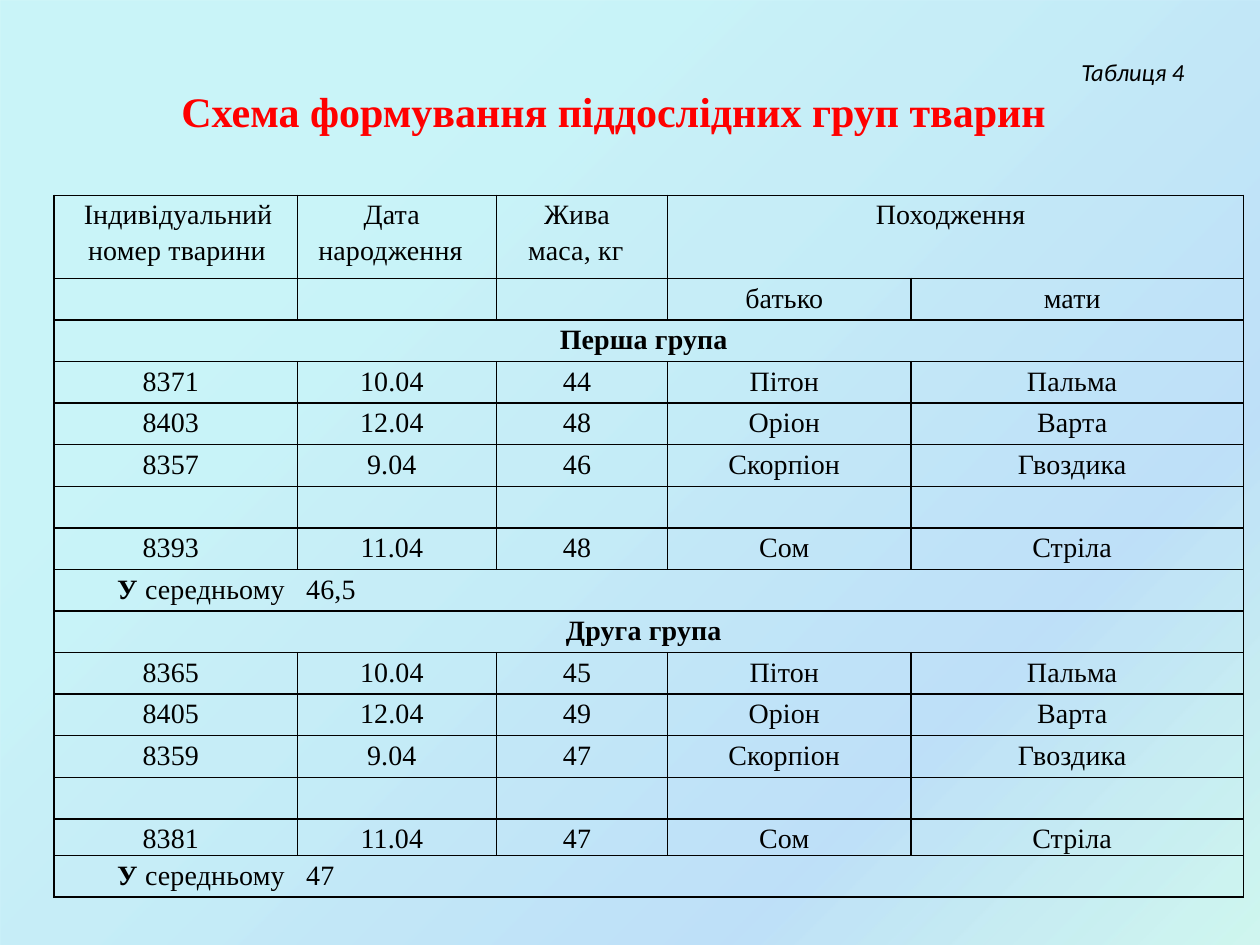
from lxml import etree
from pptx import Presentation
from pptx.dml.color import RGBColor
from pptx.enum.shapes import MSO_SHAPE
from pptx.enum.text import MSO_ANCHOR, PP_ALIGN
from pptx.oxml.ns import qn
from pptx.util import Inches, Pt

RECTANGLE = MSO_SHAPE.RECTANGLE
TOP = MSO_ANCHOR.TOP
LEFT, CENTER, RIGHT = PP_ALIGN.LEFT, PP_ALIGN.CENTER, PP_ALIGN.RIGHT

COLORS = {
    "text": "000000",
    "title": "FF0000",
    "border": "000000",
    "aqua": "21D6E0",
    "blue": "0087E6",
    "mint": "03D4A8",
    "navy": "005CBF",
}
# Position, colour and opacity, the first and last in percent
BACKDROP_STOPS = [(25, "aqua", 23), (75, "blue", 25), (100, "mint", 18), (100, "navy", 26)]

COLUMN_WIDTHS = [1.93, 1.58, 1.36, 1.93, 2.64]
HEADER_HEIGHT, ROW_HEIGHT, LAST_ANIMAL_HEIGHT = 0.66, 0.33, 0.29
AVERAGE_TABS = [(1.55, "l"), (4.09, "ctr")]

HEADERS = ["Індивідуальний номер тварини", "Дата народження", "Жива маса, кг", "Походження"]
PARENTS = ["", "", "", "батько", "мати"]
BIRTHS_AND_PARENTS = [
    ("10.04", "Пітон", "Пальма"),
    ("12.04", "Оріон", "Варта"),
    ("9.04", "Скорпіон", "Гвоздика"),
    None,
    ("11.04", "Сом", "Стріла"),
]
GROUPS = [
    ("Перша група", [("8371", "44"), ("8403", "48"), ("8357", "46"), None, ("8393", "48")], "46,5"),
    ("Друга група", [("8365", "45"), ("8405", "49"), ("8359", "47"), None, ("8381", "47")], "47"),
]


def add_element(parent, tag, **attributes):
    return etree.SubElement(parent, qn(tag), {key: str(value) for key, value in attributes.items()})


def add_color(parent, color):
    return add_element(parent, "a:srgbClr", val=COLORS[color])


def write(paragraph, text, size=16, font="Times New Roman", color="text", bold=False,
          italic=False, align=CENTER, line_spacing=None, left=0, right=0, first=0,
          tabs=(), tracking=0):
    """Append a run to the paragraph; indents and tabs are in inches, tracking in points."""
    paragraph.alignment = align
    if line_spacing:
        paragraph.line_spacing = line_spacing
    properties = paragraph._p.get_or_add_pPr()
    for key, length in (("marL", left), ("marR", right), ("indent", first)):
        properties.set(key, str(Inches(length)))
    if tabs:
        tab_list = add_element(properties, "a:tabLst")
        for position, kind in tabs:
            add_element(tab_list, "a:tab", pos=Inches(position), algn=kind)
    run = paragraph.add_run()
    run.text = text
    run.font.size = Pt(size)
    run.font.name = font
    run.font.bold = bold
    run.font.italic = italic
    run.font.color.rgb = RGBColor.from_string(COLORS[color])
    if tracking:
        run._r.get_or_add_rPr().set("spc", str(round(tracking * 100)))


class SlideBuilder:
    cell_style = dict(line_spacing=1.15, left=0.08, first=0.02, right=0.18, tracking=0.1)
    average_style = dict(line_spacing=1.15, align=LEFT, tracking=0.1)

    def __init__(self, slide):
        self.slide = slide

    def backdrop(self):
        """Cover the slide with a translucent diagonal gradient."""
        panel = self.slide.shapes.add_shape(RECTANGLE, 0, 0, Inches(10), Inches(7.67))
        panel.shadow.inherit = False
        panel.line.fill.background()
        panel.fill.gradient()
        gradient = panel._element.spPr.find(qn("a:gradFill"))
        for child in list(gradient):
            gradient.remove(child)
        stops = add_element(gradient, "a:gsLst")
        for position, color, opacity in BACKDROP_STOPS:
            stop = add_element(stops, "a:gs", pos=position * 1000)
            add_element(add_color(stop, color), "a:alpha", val=opacity * 1000)
        add_element(gradient, "a:lin", ang=45 * 60000, scaled=0)

    def heading(self, label, title):
        box = self.slide.shapes.add_textbox(Inches(0.24), Inches(0.4), Inches(9.26), Inches(1.04))
        frame = box.text_frame
        frame.word_wrap = True
        frame.vertical_anchor = TOP
        write(frame.paragraphs[0], label, size=14, font="Calibri", italic=True, align=RIGHT)
        write(frame.add_paragraph(), title, size=24, color="title", bold=True)

    def grid(self, row_heights):
        """Add an unfilled, ruled table and return it."""
        frame = self.slide.shapes.add_table(
            len(row_heights), len(COLUMN_WIDTHS), Inches(0.43), Inches(1.55),
            Inches(sum(COLUMN_WIDTHS)), Inches(sum(row_heights)))
        table = frame.table
        table.first_row = table.horz_banding = False
        for column, width in zip(table.columns, COLUMN_WIDTHS):
            column.width = Inches(width)
        for row, height in zip(table.rows, row_heights):
            row.height = Inches(height)
        for cell in table.iter_cells():
            cell.margin_left = cell.margin_right = cell.margin_top = cell.margin_bottom = 0
            for side in ("a:lnL", "a:lnR", "a:lnT", "a:lnB"):
                line = add_element(cell._tc.get_or_add_tcPr(), side, w=Pt(1))
                add_color(add_element(line, "a:solidFill"), "border")
            cell.fill.background()
        return table

    def row(self, table, index, texts, **changes):
        for column, text in enumerate(texts):
            if text:
                paragraph = table.cell(index, column).text_frame.paragraphs[0]
                write(paragraph, text, **{**self.cell_style, **changes})

    def group_title(self, table, index, title):
        table.cell(index, 0).merge(table.cell(index, 4))
        self.row(table, index, [title], bold=True)

    def average(self, table, index, value):
        table.cell(index, 0).merge(table.cell(index, 4))
        paragraph = table.cell(index, 0).text_frame.paragraphs[0]
        write(paragraph, "\tУ ", bold=True, tabs=AVERAGE_TABS, **self.average_style)
        write(paragraph, f"середньому\t{value}", **self.average_style)


def main():
    presentation = Presentation()
    presentation.slide_width, presentation.slide_height = Inches(10), Inches(7.5)
    builder = SlideBuilder(presentation.slides.add_slide(presentation.slide_layouts[6]))
    builder.backdrop()

    heights = [HEADER_HEIGHT] + [ROW_HEIGHT] * 13 + [LAST_ANIMAL_HEIGHT, ROW_HEIGHT]
    table = builder.grid(heights)
    table.cell(0, 3).merge(table.cell(0, 4))
    builder.row(table, 0, HEADERS[:1], right=0.06)
    builder.row(table, 0, [""] + HEADERS[1:])
    builder.row(table, 1, PARENTS)

    index = 2
    for title, animals, average in GROUPS:
        builder.group_title(table, index, title)
        for animal, origin in zip(animals, BIRTHS_AND_PARENTS):
            index += 1
            if animal:
                number, weight = animal
                birth, father, mother = origin
                builder.row(table, index, [number, birth, weight, father, mother])
        builder.average(table, index + 1, average)
        index += 2

    builder.heading("Таблиця 4", "Схема формування піддослідних груп тварин")
    presentation.save("out.pptx")


if __name__ == "__main__":
    main()
